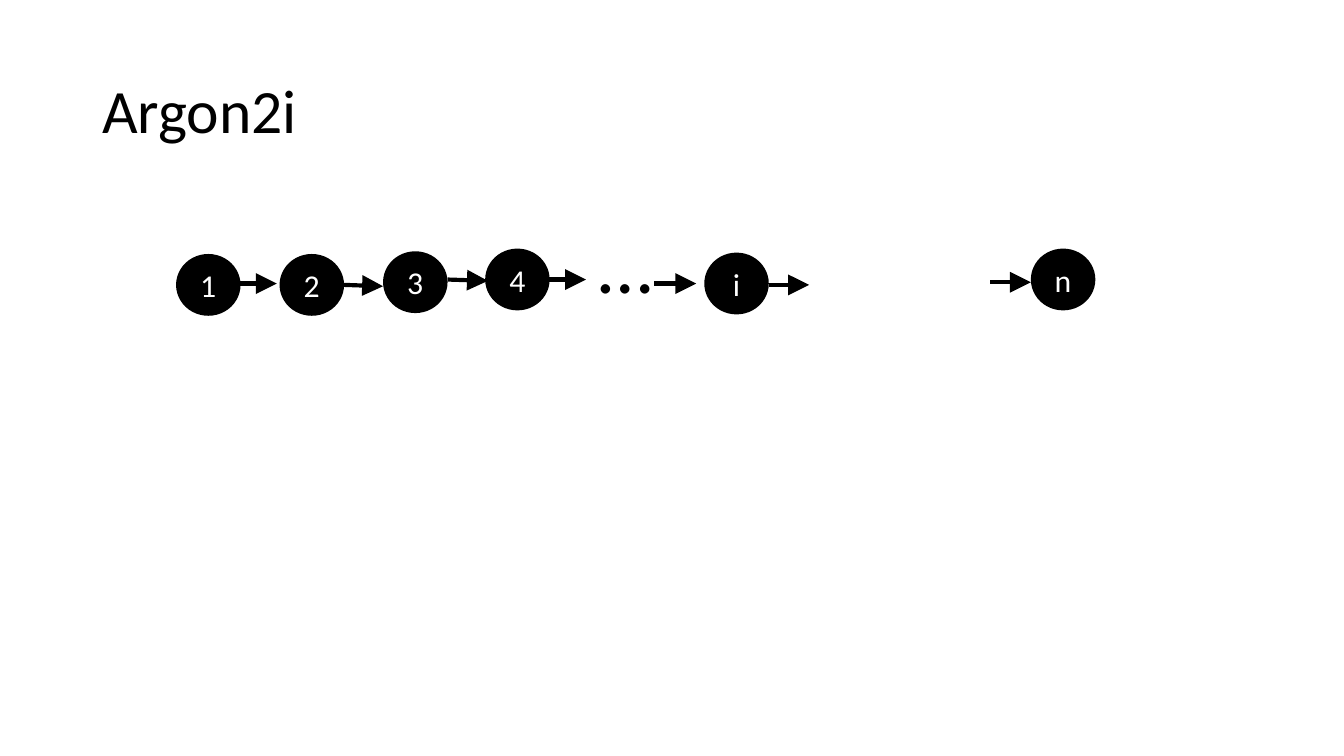
import pptx
import pptx.dml.color
import pptx.enum.shapes
import pptx.enum.text
import pptx.oxml
import pptx.oxml.ns
import pptx.util
from dataclasses import dataclass

ALIGN = pptx.enum.text.PP_ALIGN
ANCHOR = pptx.enum.text.MSO_ANCHOR
FIT = pptx.enum.text.MSO_AUTO_SIZE


@dataclass(frozen=True)
class Theme:
    """Colours, type sizes and the grid cell in inches."""
    font: str = "Calibri"
    ink: str = "000000"
    paper: str = "FFFFFF"
    title_size: int = 33
    node_size: int = 17
    ellipsis_size: int = 42
    line_width: float = 2.25
    cell: float = 0.1
    columns: int = 100
    rows: float = 56.25
    node_width: float = 4.8
    node_height: float = 4.6


def write(frame, text, *, font, size, color, align=ALIGN.LEFT, anchor=ANCHOR.MIDDLE,
          wrap=True, fit=FIT.NONE, spacing=None):
    """Put one formatted paragraph into a text frame."""
    frame.auto_size = fit
    frame.word_wrap = wrap
    frame.vertical_anchor = anchor
    frame.margin_left = frame.margin_right = pptx.util.Inches(0.07)
    frame.margin_top = frame.margin_bottom = pptx.util.Inches(0.04)
    paragraph = frame.paragraphs[0]
    paragraph.alignment = align
    if spacing:
        paragraph.line_spacing = spacing
    run = paragraph.add_run()
    run.text = text
    run.font.name = font
    run.font.size = pptx.util.Pt(size)
    run.font.color.rgb = pptx.dml.color.RGBColor.from_string(color)


class ChainSlide:
    """Draws a memory chain on one slide, measured in grid cells."""

    def __init__(self, deck, theme):
        """Size the deck and open a title-only slide."""
        self.theme = theme
        deck.slide_width, deck.slide_height = self.cells(theme.columns, theme.rows)
        self.slide = deck.slides.add_slide(deck.slide_layouts[5])
        self.ink = pptx.dml.color.RGBColor.from_string(theme.ink)

    def cells(self, *counts):
        """Turn grid counts into lengths."""
        return [pptx.util.Inches(count * self.theme.cell) for count in counts]

    def title(self, text, *box):
        """Place and fill the title placeholder."""
        heading = self.slide.shapes.title
        heading.left, heading.top, heading.width, heading.height = self.cells(*box)
        write(heading.text_frame, text, font=self.theme.font, size=self.theme.title_size,
              color=self.theme.ink, spacing=0.9)

    def node(self, label, column, row):
        """Draw a round memory block."""
        block = self.slide.shapes.add_shape(
            pptx.enum.shapes.MSO_SHAPE.OVAL,
            *self.cells(column, row, self.theme.node_width, self.theme.node_height))
        block.shadow.inherit = False
        block.fill.solid()
        block.fill.fore_color.rgb = self.ink
        block.line.fill.background()
        write(block.text_frame, label, font=self.theme.font, size=self.theme.node_size,
              color=self.theme.paper, align=ALIGN.CENTER)

    def ellipsis(self, *box):
        """Write the dots for the skipped blocks."""
        dots = self.slide.shapes.add_textbox(*self.cells(*box))
        write(dots.text_frame, "…", font=self.theme.font, size=self.theme.ellipsis_size,
              color=self.theme.ink, anchor=ANCHOR.TOP, wrap=False,
              fit=FIT.SHAPE_TO_FIT_TEXT)

    def arrow(self, column, row, length=3, drop=0):
        """Draw an arrow to the next block."""
        link = self.slide.shapes.add_connector(
            pptx.enum.shapes.MSO_CONNECTOR.STRAIGHT,
            *self.cells(column, row, column + length, row + drop))
        link.line.color.rgb = self.ink
        link.line.width = pptx.util.Pt(self.theme.line_width)
        namespace = pptx.oxml.ns.nsdecls("a")
        link.line._get_or_add_ln().append(pptx.oxml.parse_xml(
            f'<a:tailEnd {namespace} type="triangle" w="lg" len="lg"/>'))
        link._element.spPr.append(pptx.oxml.parse_xml(f'<a:effectLst {namespace}/>'))


def main():
    """Build the slide and save it."""
    deck = pptx.Presentation()
    chain = ChainSlide(deck, Theme())
    chain.title("Argon2i", 6.9, 3, 86.2, 10.9)
    blocks = [("1", 13.1, 18.9), ("2", 20.8, 18.9), ("3", 28.5, 18.7),
              ("4", 36.1, 18.5), ("i", 52.4, 18.8), ("n", 76.7, 18.5)]
    for block in blocks:
        chain.node(*block)
    chain.ellipsis(43.8, 15.6, 5.6, 7.9)
    links = [(17.6, 21.1), (25.6, 21.2, 2.9, 0.1), (33.3, 20.8, 3, 0.1),
             (40.6, 20.8), (48.7, 21.1, 3.1), (57.2, 21.2), (73.7, 21)]
    for link in links:
        chain.arrow(*link)
    deck.save("out.pptx")


if __name__ == "__main__":
    main()
